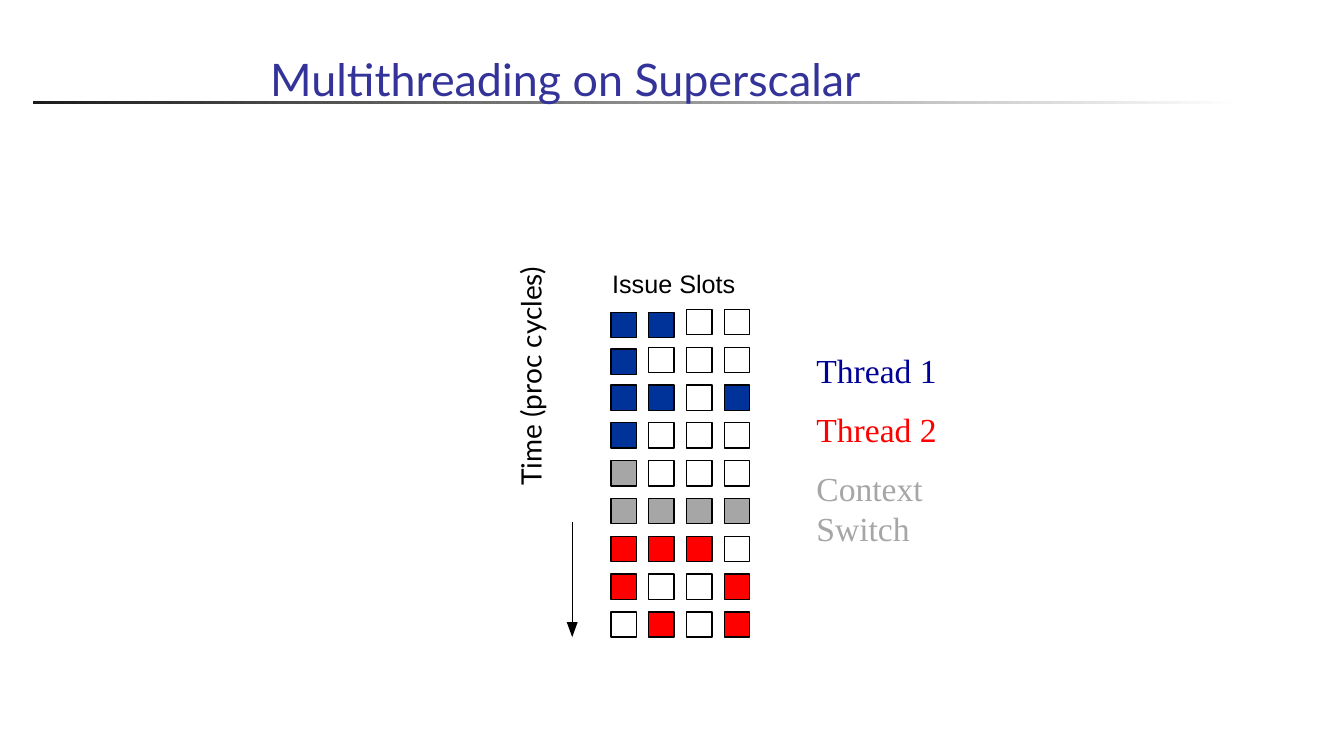
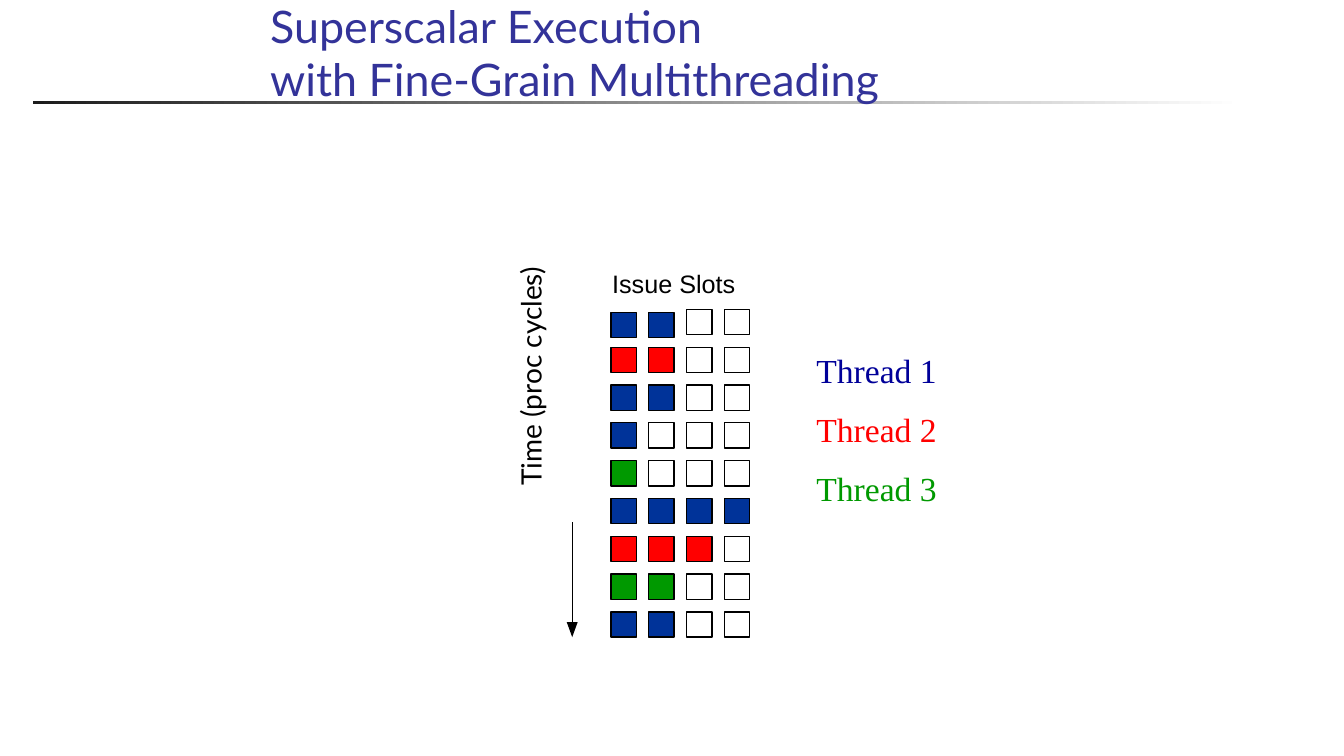
from lxml import etree
from pptx import Presentation
from pptx import util as u
from pptx.dml.color import RGBColor
from pptx.enum import shapes, text
from pptx.oxml import ns

COLORS = {
    "title": "333399", "ink": "000000", "paper": "FFFFFF", "rule": "1C1C1C",
    "thread 1 label": "000099", "thread 1": "003399", "thread 2": "FF0000",
    "thread 3": "009900", "switch": "A6A6A6",
}
SLOT_FILLS = {"1": "thread 1", "2": "thread 2", "3": "thread 3",
              "s": "switch", ".": "paper"}
GRID_LEFT, GRID_TOP, PITCH = 6.06, 3.07, 0.375
SLOT = 0.67

SLIDES = [
    {
        "title": ["Multithreading on Superscalar"],
        "cycles": ["11..", "1...", "11.1", "1...", "s...",
                   "ssss", "222.", "2..2", ".2.2"],
        "nudges": {(0, 0): 0.08, (0, 1): 0.08, (1, 0): 0.05},
        "legend": [("Thread 1", "thread 1 label"), ("Thread 2", "thread 2"),
                   ("Context Switch", "switch")],
        "legend rows": 5.65,
    },
    {
        "title": ["Superscalar Execution", "with Fine-Grain Multithreading"],
        "cycles": ["11..", "22..", "11..", "1...", "3...",
                   "1111", "222.", "33..", "11.."],
        "nudges": {(0, 0): 0.08, (0, 1): 0.08},
        "legend": [("Thread 1", "thread 1 label"), ("Thread 2", "thread 2"),
                   ("Thread 3", "thread 3")],
        "legend rows": 4.59,
    },
]


def cells(col, row, cols, rows):
    return (u.Inches(GRID_LEFT + col * PITCH), u.Inches(GRID_TOP + row * PITCH),
            u.Inches(cols * PITCH), u.Inches(rows * PITCH))


def write(paragraph, words, font, size, color):
    run = paragraph.add_run()
    run.text = words
    run.font.name = font
    run.font.size = u.Pt(size)
    run.font.color.rgb = RGBColor.from_string(COLORS[color])


deck = Presentation()
deck.slide_width, deck.slide_height = u.Inches(13.33), u.Inches(7.5)
layout = deck.slide_layouts[1]

heading = layout.placeholders[0]
heading.left, heading.top, heading.width, heading.height = cells(-9.28, -6.64, 23.63, 1.39)
heading.text_frame.vertical_anchor = text.MSO_ANCHOR.BOTTOM
heading.text_frame.auto_size = text.MSO_AUTO_SIZE.NONE

for number, content in enumerate(SLIDES):
    slide = deck.slides.add_slide(layout)

    if number == 0:
        rule = slide.shapes.add_shape(shapes.MSO_SHAPE.RECTANGLE, *cells(-15.28, -5.52, 32, 0.08))
        rule.shadow.inherit = False
        rule.line.fill.background()
        rule.fill.gradient()
        rule.fill.gradient_angle = 0
        for stop, color in zip(rule.fill.gradient_stops, ("rule", "paper")):
            stop.color.rgb = RGBColor.from_string(COLORS[color])
        layout.shapes.element.insert(2, rule.element)

    title = slide.shapes.title.text_frame.paragraphs[0]
    title.alignment = text.PP_ALIGN.LEFT
    for index, line in enumerate(content["title"]):
        if index:
            title.add_line_break()
        write(title, line, "Lato", 32, "title")

    time_axis = slide.placeholders[1]
    time_axis.left, time_axis.top, time_axis.width, time_axis.height = cells(-6.45, 0, 8.77, 1.09)
    time_axis.rotation = 270
    time_axis.text_frame.auto_size = text.MSO_AUTO_SIZE.NONE
    time_label = time_axis.text_frame.paragraphs[0]
    time_label.line_spacing = 0.9
    time_label.space_before = u.Pt(0)
    indents = time_label._p.get_or_add_pPr()
    indents.set("marL", str(u.Inches(0.38)))
    indents.set("indent", str(-u.Inches(0.38)))
    etree.SubElement(indents, ns.qn("a:buNone"))
    write(time_label, "Time (proc cycles)", "Lato", 20, "ink")

    for row, cycle in enumerate(content["cycles"]):
        for col, code in enumerate(cycle):
            drop = content["nudges"].get((row, col), 0)
            slot = slide.shapes.add_shape(shapes.MSO_SHAPE.RECTANGLE,
                                          *cells(col, row + drop, SLOT, SLOT))
            slot.shadow.inherit = False
            slot.fill.solid()
            slot.fill.fore_color.rgb = RGBColor.from_string(COLORS[SLOT_FILLS[code]])
            slot.line.color.rgb = RGBColor.from_string(COLORS["ink"])
            slot.line.width = u.Pt(1)

    slots_label = slide.shapes.add_textbox(*cells(0.03, -1.09, 3.28, 0.8)).text_frame
    slots_label.margin_left = slots_label.margin_right = 0
    slots_label.margin_top = slots_label.margin_bottom = 0
    slots_label.word_wrap = False
    write(slots_label.paragraphs[0], "Issue Slots", "Arial", 18, "ink")

    left, top, _, length = cells(-1.02, 5.63, 0, 2.93)
    time_line = slide.shapes.add_connector(shapes.MSO_CONNECTOR.STRAIGHT,
                                           left, top, left, top + length)
    time_line.line.color.rgb = RGBColor.from_string(COLORS["ink"])
    time_line.line.width = u.Pt(1)
    etree.SubElement(time_line.element.spPr, ns.qn("a:effectLst"))
    time_head = slide.shapes.add_shape(shapes.MSO_SHAPE.FLOWCHART_MERGE,
                                       *cells(-1.17, 8.27, 0.29, 0.4))
    time_head.shadow.inherit = False
    time_head.fill.solid()
    time_head.fill.fore_color.rgb = RGBColor.from_string(COLORS["ink"])
    time_head.line.fill.background()

    legend = slide.shapes.add_textbox(*cells(5.17, 0.93, 5.79, content["legend rows"])).text_frame
    legend.word_wrap = True
    for index, (entry, color) in enumerate(content["legend"]):
        paragraph = legend.add_paragraph() if index else legend.paragraphs[0]
        if index:
            paragraph.space_before = u.Pt(13.5)
        write(paragraph, entry, "Times New Roman", 24, color)

deck.save("out.pptx")
